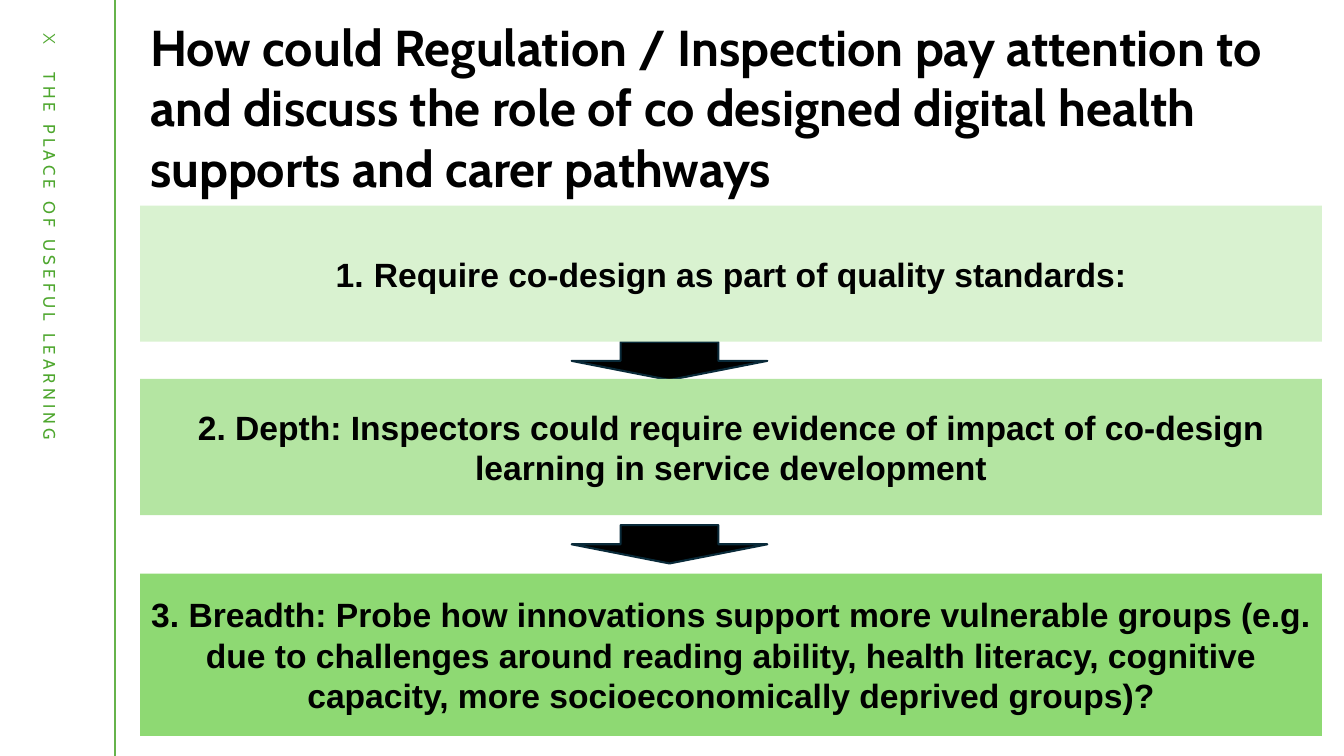
"""Builds a slide with three regulation steps linked by down arrows."""
from lxml import etree
from pptx import Presentation
from pptx.dml.color import RGBColor
from pptx.enum import shapes, text
from pptx.oxml.ns import qn
from pptx.util import Inches, Pt

BLACK = RGBColor(0x00, 0x00, 0x00)
RULE_GREEN = RGBColor(0x66, 0xB3, 0x4B)
TAG_GREEN = RGBColor(0x4E, 0xA7, 0x2E)
ARROW_EDGE = RGBColor(0x09, 0x2A, 0x39)
PALE = RGBColor(0xD9, 0xF2, 0xD0)
MID = RGBColor(0xB4, 0xE5, 0xA2)
STRONG = RGBColor(0x8E, 0xD9, 0x73)

TITLE = ("How could Regulation / Inspection pay attention to and discuss the role of "
         "co designed digital health supports and carer pathways")
TAGLINE = [("X", "Montserrat"), ("\tTHE PLACE OF USEFUL LEARNING", "Cabin")]
STEPS = [
    ("Require co-design as part of quality standards:", 2.04, 1.35, PALE, True),
    ("2. Depth: Inspectors could require evidence of impact of co-design "
     "learning in service development", 3.76, 1.35, MID, False),
    ("3. Breadth: Probe how innovations support more vulnerable groups (e.g. due to "
     "challenges around reading ability, health literacy, cognitive capacity, more "
     "socioeconomically deprived groups)?", 5.69, 1.61, STRONG, False),
]
ARROW_TOPS = [3.39, 5.21]
LEFT, WIDTH = 1.39, 11.72
ARROW_LEFT, ARROW_W, ARROW_H = 5.67, 1.94, 0.38
RULE_X = 1.14


def style(r, name, size, color, bold=False):
    r.font.name, r.font.size, r.font.bold = name, Pt(size), bold
    r.font.color.rgb = color


def add_text_box(s, left, top, width, height):
    sp = s.shapes.add_textbox(*map(Inches, (left, top, width, height)))
    sp.text_frame.word_wrap = True
    sp.text_frame.auto_size = text.MSO_AUTO_SIZE.SHAPE_TO_FIT_TEXT
    return sp


def add_block(s, kind, left, top, width, height, fill):
    sp = s.shapes.add_shape(kind, *map(Inches, (left, top, width, height)))
    sp.shadow.inherit = False
    sp.fill.solid()
    sp.fill.fore_color.rgb = fill
    return sp


def add_step(s, words, top, height, fill, numbered):
    sp = add_block(s, shapes.MSO_SHAPE.ROUNDED_RECTANGLE, LEFT, top, WIDTH, height, fill)
    sp.adjustments[0] = 0
    sp.line.fill.background()
    tf = sp.text_frame
    tf.word_wrap = True
    tf.vertical_anchor = text.MSO_ANCHOR.MIDDLE
    p = tf.paragraphs[0]
    p.text = words
    p.alignment = text.PP_ALIGN.CENTER
    if numbered:
        pPr = p._p.get_or_add_pPr()
        pPr.set("marL", str(Inches(0.38)))
        pPr.set("indent", str(-Inches(0.38)))
        etree.SubElement(pPr, qn("a:buFont"), typeface="+mj-lt")
        etree.SubElement(pPr, qn("a:buAutoNum"), type="arabicPeriod")
    style(p.runs[0], "Arial", 24, BLACK, True)


def add_arrow(s, top):
    sp = add_block(s, shapes.MSO_SHAPE.DOWN_ARROW, ARROW_LEFT, top, ARROW_W, ARROW_H, BLACK)
    sp.line.color.rgb = ARROW_EDGE
    sp.line.width = Pt(1.5)


def add_rule(s):
    x = Inches(RULE_X)
    line = s.shapes.add_connector(shapes.MSO_CONNECTOR.STRAIGHT, x, 0, x, Inches(7.5))
    line.line.color.rgb = RULE_GREEN
    line.line.width = Pt(1)
    etree.SubElement(line._element.spPr, qn("a:effectLst"))


def add_tagline(s):
    sp = add_text_box(s, -2.34, 2.92, 5.67, 0.3)
    sp.rotation = 90
    p = sp.text_frame.paragraphs[0]
    tabs = etree.SubElement(p._p.get_or_add_pPr(), qn("a:tabLst"))
    etree.SubElement(tabs, qn("a:tab"), pos=str(Inches(0.39)), algn="l")
    for words, name in TAGLINE:
        r = p.add_run()
        r.text = words
        style(r, name, 12, TAG_GREEN)
        r.font._element.set("spc", "300")


def add_title(s):
    p = add_text_box(s, LEFT, 0.11, WIDTH, 1.92).text_frame.paragraphs[0]
    p.text = TITLE
    style(p.runs[0], "Cabin", 36, BLACK, True)


def main():
    prs = Presentation()
    prs.slide_width, prs.slide_height = Inches(13.33), Inches(7.5)
    s = prs.slides.add_slide(prs.slide_layouts[6])
    add_rule(s)
    add_tagline(s)
    add_title(s)
    for top in ARROW_TOPS:
        add_arrow(s, top)
    for step in STEPS:
        add_step(s, *step)
    prs.save("out.pptx")


if __name__ == "__main__":
    main()
